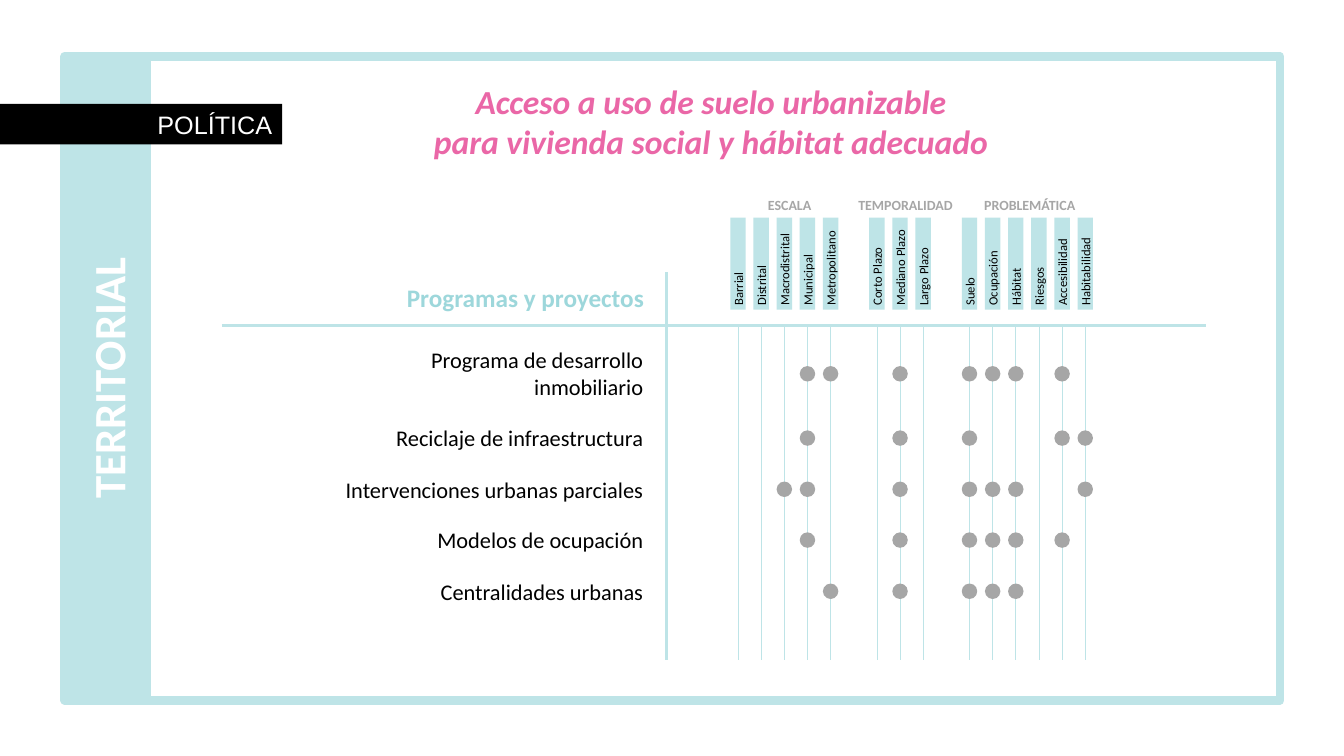
"""Builds the territorial policy slide with its matrix of programmes and criteria."""
from dataclasses import dataclass
from typing import NamedTuple

from lxml import etree
from pptx import Presentation
from pptx import util as u
from pptx.dml.color import RGBColor
from pptx.enum import shapes, text
from pptx.oxml import ns

COLORS = {
    "aqua": "BEE4E7",
    "teal": "9DD7DB",
    "pink": "EA67A7",
    "gray": "A6A6A6",
    "black": "000000",
    "white": "FFFFFF",
}

FIRST_COLUMN = 18.6
COLUMN_PITCH = 8.75 / 15
AXIS_Y = 8.2
MATRIX_BOTTOM = 16.64
LABEL_LENGTH = 2.32
LABEL_WIDTH = 0.39
LABEL_MIDDLE = 6.64
DOT_SIZE = 0.39
TIGHT_INSETS = (0.1, 0, 0, 0)
NORMAL_INSETS = (0.25, 0.13, 0.25, 0.13)


class Box(NamedTuple):
    left: float
    top: float
    width: float
    height: float


@dataclass
class Group:
    title: str
    title_box: Box
    first_slot: int
    criteria: list[str]


@dataclass
class Programme:
    lines: list[str]
    middle: float
    criteria: list[str]
    left: float = 2.46
    height: float = 0.94


GROUPS = [
    Group("ESCALA", Box(18.69, 4.95, 2.32, 0.43), 0,
          ["Barrial", "Distrital", "Macrodistrital", "Municipal", "Metropolitano"]),
    Group("TEMPORALIDAD", Box(21.41, 4.95, 2.72, 0.43), 6,
          ["Corto Plazo", "Mediano Plazo", "Largo Plazo"]),
    Group("PROBLEMÁTICA", Box(24.54, 4.95, 2.72, 0.43), 10,
          ["Suelo", "Ocupación", "Hábitat", "Riesgos", "Accesibilidad", "Habitabilidad"]),
]

PROGRAMMES = [
    Programme(["Programa de desarrollo", "inmobiliario"], 9.42,
              ["Municipal", "Metropolitano", "Mediano Plazo", "Suelo", "Ocupación",
               "Hábitat", "Accesibilidad"], left=4.98, height=1.63),
    Programme(["Reciclaje de infraestructura"], 11.04,
              ["Municipal", "Mediano Plazo", "Suelo", "Accesibilidad", "Habitabilidad"]),
    Programme(["Intervenciones urbanas parciales"], 12.33,
              ["Macrodistrital", "Municipal", "Mediano Plazo", "Suelo", "Ocupación",
               "Hábitat", "Habitabilidad"]),
    Programme(["Modelos de ocupación"], 13.61,
              ["Municipal", "Mediano Plazo", "Suelo", "Ocupación", "Hábitat", "Accesibilidad"]),
    Programme(["Centralidades urbanas"], 14.9,
              ["Metropolitano", "Mediano Plazo", "Suelo", "Ocupación", "Hábitat"]),
]


def color(name: str) -> RGBColor:
    return RGBColor.from_string(COLORS[name])


def lengths(box: Box) -> list[u.Cm]:
    return [u.Cm(value) for value in box]


def write(shape, lines: list[str], *, size: float, fill: str = "black", font: str = "Calibri",
          bold: bool = False, italic: bool = False, align=text.PP_ALIGN.LEFT,
          anchor=text.MSO_ANCHOR.TOP, insets=NORMAL_INSETS) -> None:
    frame = shape.text_frame
    frame.word_wrap = True
    frame.auto_size = text.MSO_AUTO_SIZE.SHAPE_TO_FIT_TEXT
    frame.vertical_anchor = anchor
    (frame.margin_left, frame.margin_top,
     frame.margin_right, frame.margin_bottom) = [u.Cm(value) for value in insets]
    for index, line in enumerate(lines):
        paragraph = frame.add_paragraph() if index else frame.paragraphs[0]
        paragraph.alignment = align
        run = paragraph.add_run()
        run.text = line
        run.font.name = font
        run.font.size = u.Pt(size)
        run.font.bold = bold
        run.font.italic = italic
        run.font.color.rgb = color(fill)


def add_text(slide, box: Box, lines: list[str], rotation: float = 0, **text_format) -> None:
    shape = slide.shapes.add_textbox(*lengths(box))
    shape.rotation = rotation
    write(shape, lines, **text_format)


def add_solid(slide, kind, box: Box, fill: str, border: float = 0):
    shape = slide.shapes.add_shape(kind, *lengths(box))
    shape.shadow.inherit = False
    shape.fill.solid()
    shape.fill.fore_color.rgb = color(fill)
    if border:
        shape.line.color.rgb = color("aqua")
        shape.line.width = u.Pt(border)
    else:
        shape.line.fill.background()
    return shape


def add_line(slide, x1: float, y1: float, x2: float, y2: float, width: float) -> None:
    line = slide.shapes.add_connector(
        shapes.MSO_CONNECTOR.STRAIGHT, u.Cm(x1), u.Cm(y1), u.Cm(x2), u.Cm(y2))
    line.line.color.rgb = color("aqua")
    line.line.width = u.Pt(width)
    etree.SubElement(line._element.spPr, ns.qn("a:effectLst"))


def add_frame(slide) -> None:
    rectangle = shapes.MSO_SHAPE.RECTANGLE
    add_solid(slide, rectangle, Box(1.63, 1.42, 30.61, 16.23), "aqua", border=6)
    add_solid(slide, rectangle, Box(3.71, 1.42, 28.55, 16.23), "white", border=6)


def add_headings(slide) -> None:
    add_text(slide, Box(3.86, 1.9, 28.12, 2.31),
             ["Acceso a uso de suelo urbanizable", "para vivienda social y hábitat adecuado"],
             size=24, fill="pink", bold=True, italic=True, align=text.PP_ALIGN.CENTER)
    add_text(slide, Box(2.46, 6.99, 14.02, 1.02), ["Programas y proyectos"],
             size=18, fill="teal", bold=True, align=text.PP_ALIGN.RIGHT)
    add_text(slide, Box(-6.81, 8.71, 19.05, 1.63), ["TERRITORIAL"], rotation=270,
             size=32, fill="white", bold=True, align=text.PP_ALIGN.CENTER)
    tab = add_solid(slide, shapes.MSO_SHAPE.RECTANGLE, Box(0, 2.62, 7.11, 1.02), "black")
    write(tab, ["POLÍTICA"], size=18, fill="white", font="Arial", align=text.PP_ALIGN.RIGHT)


def add_matrix(slide) -> None:
    columns = {name: FIRST_COLUMN + (group.first_slot + index) * COLUMN_PITCH
               for group in GROUPS for index, name in enumerate(group.criteria)}
    for name, x in columns.items():
        add_line(slide, x, AXIS_Y, x, MATRIX_BOTTOM, 0.5)
        label_box = Box(x - LABEL_LENGTH / 2, LABEL_MIDDLE - LABEL_WIDTH / 2,
                        LABEL_LENGTH, LABEL_WIDTH)
        label = add_solid(slide, shapes.MSO_SHAPE.RECTANGLE, label_box, "aqua")
        label.rotation = 270
        write(label, [name], size=9, anchor=text.MSO_ANCHOR.MIDDLE, insets=TIGHT_INSETS)
    for group in GROUPS:
        add_text(slide, group.title_box, [group.title], size=10, fill="gray", bold=True,
                 align=text.PP_ALIGN.CENTER, anchor=text.MSO_ANCHOR.MIDDLE,
                 insets=TIGHT_INSETS)
    for programme in PROGRAMMES:
        box = Box(programme.left, programme.middle - programme.height / 2,
                  16.46 - programme.left, programme.height)
        add_text(slide, box, programme.lines, size=16, align=text.PP_ALIGN.RIGHT)
        for name in programme.criteria:
            dot_box = Box(columns[name] - DOT_SIZE / 2, programme.middle - DOT_SIZE / 2,
                          DOT_SIZE, DOT_SIZE)
            add_solid(slide, shapes.MSO_SHAPE.OVAL, dot_box, "gray")
    add_line(slide, 16.79, 6.86, 16.79, MATRIX_BOTTOM, 2.25)
    add_line(slide, 5.59, AXIS_Y, 30.38, AXIS_Y, 2.25)


def main() -> None:
    presentation = Presentation()
    presentation.slide_width = u.Cm(33.87)
    presentation.slide_height = u.Cm(19.05)
    slide = presentation.slides.add_slide(presentation.slide_layouts[6])
    add_frame(slide)
    add_matrix(slide)
    add_headings(slide)
    presentation.save("out.pptx")


if __name__ == "__main__":
    main()
